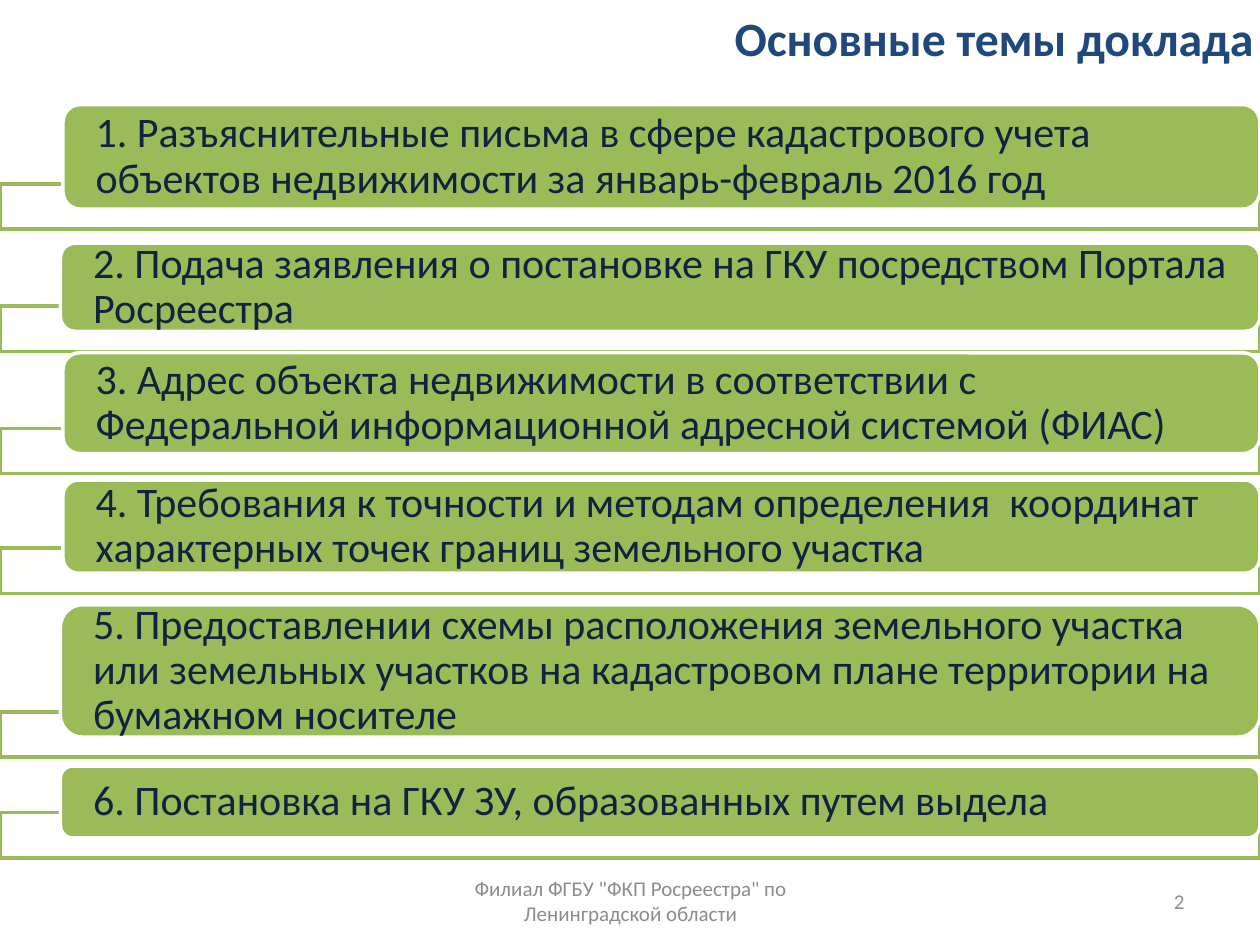
from pptx import Presentation
from pptx.dml.color import RGBColor
from pptx.enum.shapes import MSO_SHAPE
from pptx.enum.text import MSO_ANCHOR, MSO_AUTO_SIZE, PP_ALIGN
from pptx.util import Inches, Pt

GREEN = RGBColor(0x9B, 0xBB, 0x59)
WHITE = RGBColor(0xFF, 0xFF, 0xFF)
NAVY = RGBColor(0x0F, 0x24, 0x3E)
BLUE = RGBColor(0x1F, 0x49, 0x7D)
GRAY = RGBColor(0x8C, 0x8C, 0x8C)

SLIDE_W = 10
FRAME_H = 0.36
FRAME_OVERLAP = 0.2
TEXT_INDENT = 0.26
CORNER_INSET = 0.05

TOPICS = [
    (0.5, 0.83, 0.83, "1. Разъяснительные письма в сфере кадастрового учета объектов недвижимости за январь-февраль 2016 год"),
    (0.48, 1.93, 0.7, "2. Подача заявления о постановке на ГКУ посредством Портала Росреестра"),
    (0.5, 2.8, 0.8, "3. Адрес объекта недвижимости в соответствии с Федеральной информационной адресной системой (ФИАС)"),
    (0.5, 3.81, 0.74, "4. Требования к точности и методам определения  координат характерных точек границ земельного участка"),
    (0.48, 4.8, 1.05, "5. Предоставлении схемы расположения земельного участка или земельных участков на кадастровом плане территории на бумажном носителе"),
    (0.48, 6.08, 0.57, "6. Постановка на ГКУ ЗУ, образованных путем выдела"),
]


def write_text(sp, text, size, color, bold=False, align=PP_ALIGN.LEFT,
               inset_x=0.1, inset_y=0.05, spacing=None):
    tf = sp.text_frame
    tf.word_wrap = True
    tf.auto_size = MSO_AUTO_SIZE.NONE
    tf.vertical_anchor = MSO_ANCHOR.MIDDLE
    tf.margin_left = tf.margin_right = Inches(inset_x)
    tf.margin_top = tf.margin_bottom = Inches(inset_y)
    p = tf.paragraphs[0]
    p.alignment = align
    p.line_spacing = spacing
    r = p.add_run()
    r.text = text
    r.font.name = "Calibri"
    r.font.size = Pt(size)
    r.font.bold = bold
    r.font.color.rgb = color


def add_title(s, text):
    sp = s.shapes.title
    sp.left, sp.top, sp.width, sp.height = map(Inches, (3.66, 0, 6.34, 0.6))
    write_text(sp, text, 27.3, BLUE, bold=True, align=PP_ALIGN.RIGHT, inset_x=0.05)


def add_box(s, kind, left, top, width, height, fill, line):
    sp = s.shapes.add_shape(kind, *map(Inches, (left, top, width, height)))
    sp.shadow.inherit = False
    sp.fill.solid()
    sp.fill.fore_color.rgb = fill
    sp.line.color.rgb = line
    sp.line.width = Pt(2)
    return sp


def add_topic(s, left, top, height, text):
    frame_top = top + height - FRAME_OVERLAP
    add_box(s, MSO_SHAPE.RECTANGLE, 0, frame_top, SLIDE_W, FRAME_H, WHITE, GREEN)
    sp = add_box(s, MSO_SHAPE.ROUNDED_RECTANGLE, left, top, SLIDE_W - left, height,
                 GREEN, WHITE)
    write_text(sp, text, 24, NAVY, inset_x=TEXT_INDENT - CORNER_INSET * height,
               inset_y=0, spacing=0.9)


def add_footer(s, left, width, text, align):
    sp = s.shapes.add_textbox(*map(Inches, (left, 6.95, width, 0.4)))
    write_text(sp, text, 12, GRAY, align=align)


def main():
    prs = Presentation()
    prs.slide_width, prs.slide_height = Inches(SLIDE_W), Inches(7.5)
    s = prs.slides.add_slide(prs.slide_layouts[5])
    add_footer(s, 3.42, 3.17, 'Филиал ФГБУ "ФКП Росреестра" по Ленинградской области',
               PP_ALIGN.CENTER)
    add_footer(s, 7.17, 2.33, "2", PP_ALIGN.RIGHT)
    for topic in TOPICS:
        add_topic(s, *topic)
    add_title(s, "Основные темы доклада")
    prs.save("out.pptx")


if __name__ == "__main__":
    main()
